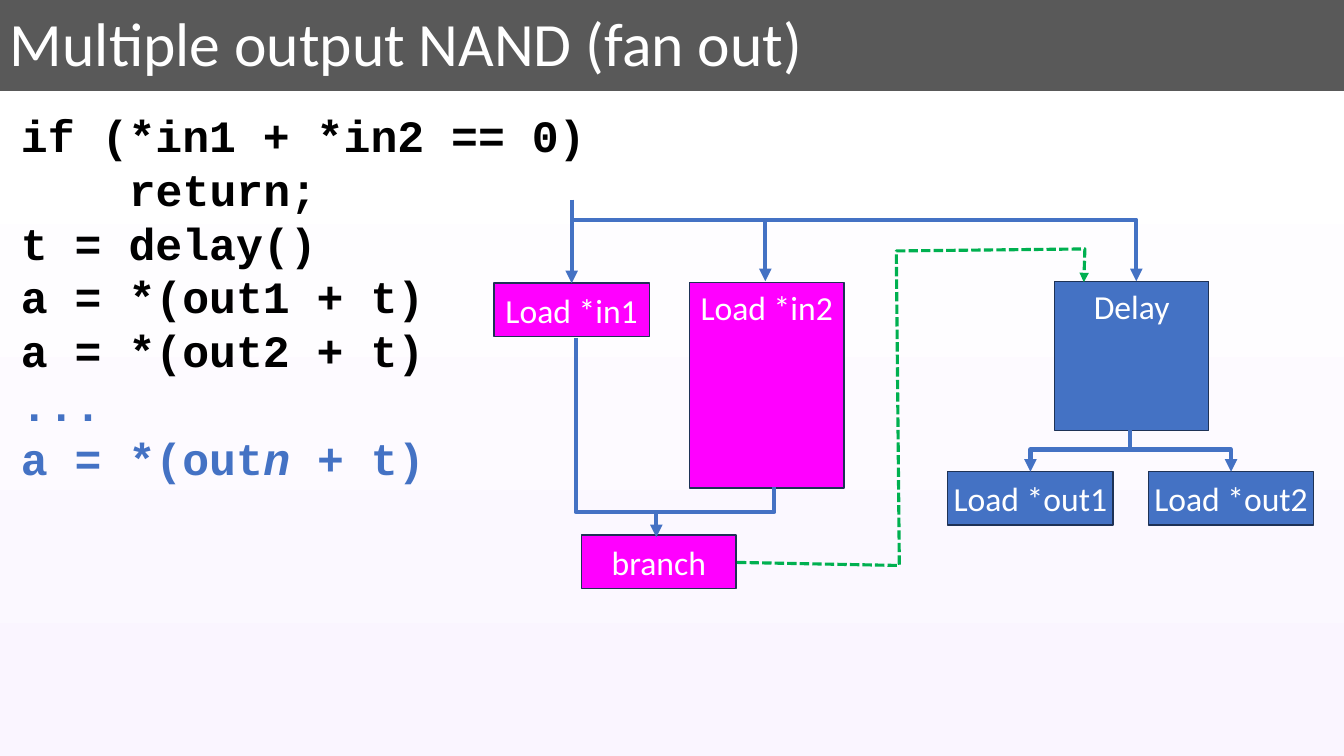
from lxml import etree
from pptx import Presentation
from pptx.dml.color import RGBColor
from pptx.enum.dml import MSO_LINE
from pptx.enum.shapes import MSO_CONNECTOR, MSO_SHAPE
from pptx.enum.text import MSO_ANCHOR, MSO_AUTO_SIZE, PP_ALIGN
from pptx.oxml.ns import qn
from pptx.util import Pt

SCALE = 9144
RECT = MSO_SHAPE.RECTANGLE
LINE, ELBOW = MSO_CONNECTOR.STRAIGHT, MSO_CONNECTOR.ELBOW
DASH = MSO_LINE.SQUARE_DOT
TOP, MIDDLE = MSO_ANCHOR.TOP, MSO_ANCHOR.MIDDLE
CENTER = PP_ALIGN.CENTER
GROW = MSO_AUTO_SIZE.SHAPE_TO_FIT_TEXT

COLORS = {
    "bar": "595959", "white": "FFFFFF", "tint": "FAF5FF", "black": "000000",
    "pink": "FF00FF", "blue": "4472C4", "edge": "1E3256", "green": "00B050",
}
STOPS = [(0, "bar"), (12, "bar"), (12, "white"), (100, "tint")]
CODE = [
    (0, "black", ["if (*in1 + *in2 == 0)"]),
    (107, "black", ["return;"]),
    (0, "black", ["t = delay()"]),
    (0, "black", ["a = *(out1 + t)"]),
    (0, "black", ["a = *(out2 + t)"]),
    (0, "blue", ["..."]),
    (0, "blue", ["a = *(out", "n", " + t)"]),
]
NODES = [
    ("Load *in1", 0, 83, 154, 53, "pink", MIDDLE),
    ("Load *in2", 194, 82, 153, 204, "pink", TOP),
    ("Delay", 556, 81, 153, 148, "blue", TOP),
    ("branch", 87, 333, 153, 53, "pink", MIDDLE),
    ("Load *out1", 450, 270, 164, 53, "blue", MIDDLE),
    ("Load *out2", 649, 270, 164, 53, "blue", MIDDLE),
]
WIRES = [
    ([(269, 20), (637, 20), (637, 81)], "blue", True),
    ([(241, 360), (402, 363), (399, 51), (586, 49), (585, 82)], "green", True),
    ([(77, 20), (269, 20), (269, 81)], "blue", True),
    ([(278, 285), (278, 310), (161, 310), (161, 335)], "blue", True),
    ([(81, 137), (81, 310), (161, 310)], "blue", False),
]


def px(*nums):
    return [round(n * SCALE) for n in nums]


def rgb(name):
    return RGBColor.from_string(COLORS[name])


def apply(obj, vals):
    for key, val in vals.items():
        setattr(obj, key, val)


def write(para, text, size, face, color, **more):
    run = para.add_run()
    run.text = text
    apply(run.font, {"size": Pt(size), "name": face, **more})
    run.font.color.rgb = rgb(color)


def stroke(item, color, width, arrow=False):
    item.line.color.rgb = rgb(color)
    item.line.width = Pt(width)
    if arrow:
        etree.SubElement(item.line._get_or_add_ln(), qn("a:tailEnd"), type="triangle")


def flat(link):
    etree.SubElement(link._element.spPr, qn("a:effectLst"))


def paint(slide):
    fill = slide.background.fill
    fill.gradient()
    fill.gradient_angle = 270
    stops = slide.element.find(".//" + qn("a:gsLst"))
    for old in list(stops):
        stops.remove(old)
    for pos, color in STOPS:
        stop = etree.SubElement(stops, qn("a:gs"), pos=str(pos * 1000))
        etree.SubElement(stop, qn("a:srgbClr"), val=COLORS[color])


def title(slide, left, top, width, height):
    frame = slide.shapes.add_textbox(*px(left, top, width, height)).text_frame
    apply(frame, {"word_wrap": True, "vertical_anchor": MIDDLE})
    para = frame.paragraphs[0]
    para.line_spacing = 0.9
    write(para, "Multiple output NAND (fan out)", 44, "Calibri", "white")


def code(slide, left, top, width, height):
    frame = slide.shapes.add_textbox(*px(left, top, width, height)).text_frame
    apply(frame, {"word_wrap": True, "auto_size": GROW})
    for row, (indent, color, parts) in enumerate(CODE):
        para = frame.add_paragraph() if row else frame.paragraphs[0]
        if indent:
            para._p.get_or_add_pPr().set("marL", str(indent * SCALE))
        for part in parts:
            write(para, part, 32, "Courier New", color, bold=True, italic=part == "n")


def node(slide, left, top, width, height, text, color, anchor):
    box = slide.shapes.add_shape(RECT, *px(left, top, width, height))
    box.shadow.inherit = False
    box.fill.solid()
    box.fill.fore_color.rgb = rgb(color)
    stroke(box, "edge", 1)
    frame = box.text_frame
    side, = px(4)
    apply(frame, {"word_wrap": True, "vertical_anchor": anchor,
                  "margin_left": side, "margin_right": side})
    para = frame.paragraphs[0]
    para.alignment = CENTER
    write(para, text, 24, "Calibri", "white")
    return box


def wire(slide, left, top, points, color, arrow):
    spots = [px(left + x, top + y) for x, y in points]
    pen = slide.shapes.build_freeform(*spots[0], scale=1.0)
    pen.add_line_segments(spots[1:], close=False)
    path = pen.convert_to_shape()
    path.shadow.inherit = False
    path.fill.background()
    if color == "green":
        path.line.dash_style = DASH
    stroke(path, color, 2.25 if color == "green" else 3, arrow)


def branch(slide, x, y, end, low):
    span, drop = abs(end - x), low - y
    left, top = (x + end - drop) / 2, (y + low - span) / 2
    link = slide.shapes.add_connector(ELBOW, *px(left, top, left + drop, top + span))
    form = link._element.spPr.find(qn("a:xfrm"))
    form.set("rot", str((270 if end > x else 90) * 60000))
    if end > x:
        form.set("flipH", "1")
    stroke(link, "blue", 3, True)
    flat(link)


def graph(slide, left, top):
    boxes = {}
    for text, x, y, width, height, color, anchor in NODES:
        boxes[text] = node(slide, left + x, top + y, width, height, text, color, anchor)
    feed = slide.shapes.add_connector(LINE, *px(left + 77, top, left + 77, top + 83))
    feed.end_connect(boxes["Load *in1"], 0)
    stroke(feed, "blue", 3, True)
    flat(feed)
    for points, color, arrow in WIRES:
        wire(slide, left, top, points, color, arrow)
    for end in (731, 532):
        branch(slide, left + 631, top + 226, left + end, top + 270)


def main():
    deck = Presentation()
    deck.slide_width, deck.slide_height = px(1333, 750)
    slide = deck.slides.add_slide(deck.slide_layouts[6])
    paint(slide)
    title(slide, 0, 0, 1323, 92)
    code(slide, 11, 102, 596, 495)
    graph(slide, 490, 198)
    deck.save("out.pptx")


if __name__ == "__main__":
    main()
